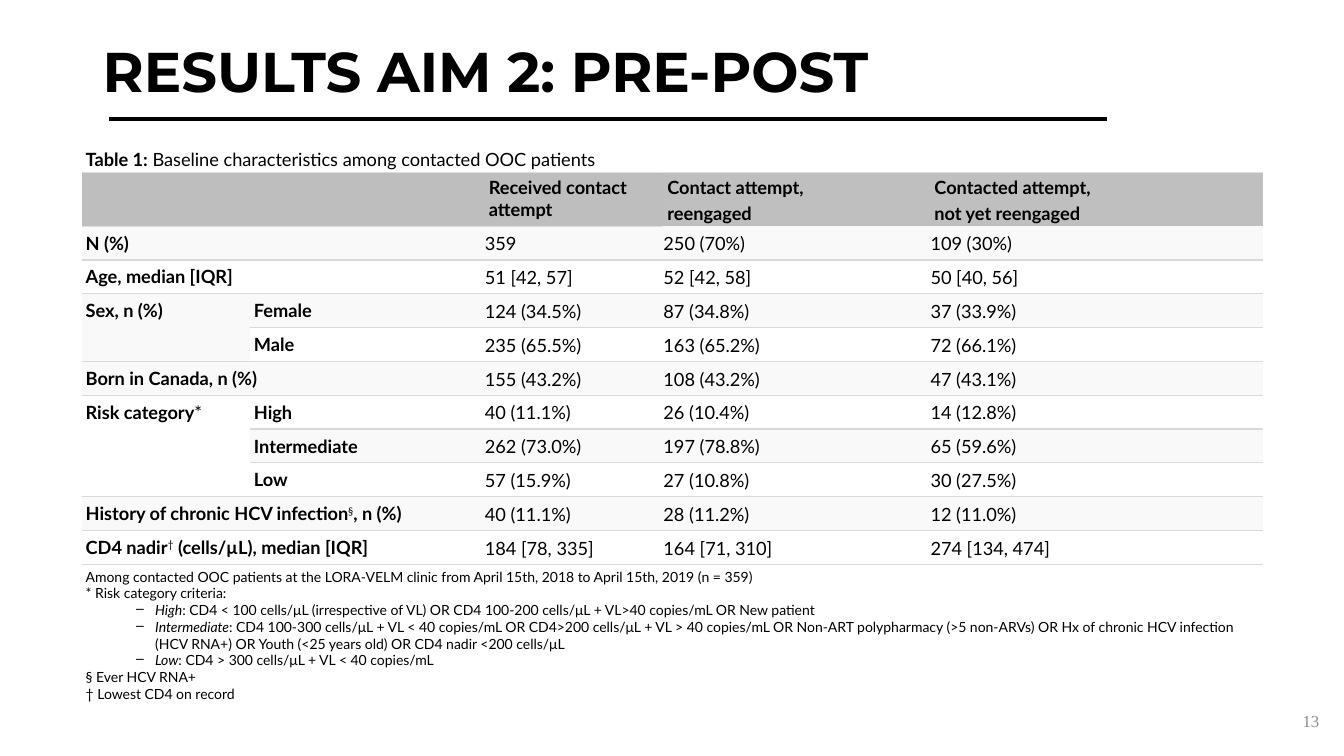
from lxml.etree import SubElement
from pptx import Presentation
from pptx.dml.color import RGBColor
from pptx.enum.shapes import MSO_CONNECTOR
from pptx.enum.text import MSO_ANCHOR, PP_ALIGN
from pptx.oxml.ns import qn
from pptx.util import Cm, Pt

COLORS = {"ink": "000000", "paper": "FFFFFF", "stripe": "F9F9F9", "header": "BEBEBE",
          "header_light": "BFBFBF", "rule": "D9D9D9", "header_rule": "DDDDDD", "number": "8C8C8C"}
NO_GRID_STYLE = "{2D5ABB26-0587-4C30-8999-92F81FD0307C}"
COLUMN_WIDTHS = [4.24, 5.92, 4.5, 6.73, 8.38]
CAPTION_HEIGHT, HEADER_HEIGHT, ROW_HEIGHT, NOTES_HEIGHT = 0.71, 1.36, 0.85, 3.53
NARROW_INSETS = (0.1, 0.1, 0.03, 0.05)
LABEL_INSETS = (0.1, 0.15, 0.03, 0.15)
NO_INSETS = (0, 0, 0, 0)
RULE = ("rule", 1)
HEADER_RULE = ("header_rule", 0.6)

# Spans are (text, style) pairs; style letters: b bold, i italic, s superscript
CAPTION = [("Table 1:", "b"), (" Baseline characteristics among contacted OOC patients", "")]
HEADERS = [["Received contact attempt"], ["Contact attempt,", "reengaged"],
           ["Contacted attempt,", "not yet reengaged"]]
# Label spans, sublabel, values
ROWS = [
    ([("N (%)", "b")], "", ["359", "250 (70%)", "109 (30%)"]),
    ([("Age, median [IQR]", "b")], "", ["51 [42, 57]", "52 [42, 58]", "50 [40, 56]"]),
    ([("Sex, n (%)", "b")], "Female", ["124 (34.5%)", "87 (34.8%)", "37 (33.9%)"]),
    ([], "Male", ["235 (65.5%)", "163 (65.2%)", "72 (66.1%)"]),
    ([("Born in Canada, n (%)", "b")], "", ["155 (43.2%)", "108 (43.2%)", "47 (43.1%)"]),
    ([("Risk category", "b"), ("*", "")], "High", ["40 (11.1%)", "26 (10.4%)", "14 (12.8%)"]),
    ([], "Intermediate", ["262 (73.0%)", "197 (78.8%)", "65 (59.6%)"]),
    ([], "Low", ["57 (15.9%)", "27 (10.8%)", "30 (27.5%)"]),
    ([("History of chronic HCV infection", "b"), ("§", "s"), (", n (%)", "b")], "",
     ["40 (11.1%)", "28 (11.2%)", "12 (11.0%)"]),
    ([("CD4 nadir", "b"), ("†", "s"), (" (cells/µL), median [IQR]", "b")], "",
     ["184 [78, 335]", "164 [71, 310]", "274 [134, 474]"]),
]
NOTES = [
    [("Among contacted OOC patients at the LORA-VELM clinic from April 15th, 2018 "
      "to April 15th, 2019 (n = 359)", ""), ("\n", ""), ("* Risk category criteria:", "")],
    [("High", "i"), (": CD4 < 100 cells/μL (irrespective of VL) OR CD4 100-200 cells/μL + "
                     "VL>40 copies/mL OR New patient", "")],
    [("Intermediate", "i"), (": CD4 100-300 cells/μL + VL < 40 copies/mL OR CD4>200 cells/μL + "
                             "VL > 40 copies/mL OR Non-ART polypharmacy (>5 non-ARVs) OR Hx of "
                             "chronic HCV infection (HCV RNA+) OR Youth (<25 years old) OR "
                             "CD4 nadir <200 cells/μL", "")],
    [("Low", "i"), (": CD4 > 300 cells/μL + VL < 40 copies/mL", "")],
    [("§ Ever HCV RNA+", "")],
    [("† Lowest CD4 on record", "")],
]


def color(name):
    return RGBColor.from_string(COLORS[name])


def set_font(para, size, name="Lato", ink="ink"):
    para.font.size = Pt(size)
    para.font.name = name
    para.font.color.rgb = color(ink)


def write_spans(para, spans, size=13):
    set_font(para, size)
    for text, style in spans:
        if text == "\n":
            para.add_line_break()
            continue
        span = para.add_run()
        span.text = text
        span.font.bold = "b" in style
        span.font.italic = "i" in style
        if "s" in style:
            span.font._element.set("baseline", "30000")


def write_cell(cell, lines, insets, anchor=MSO_ANCHOR.TOP, size=13, before=3):
    cell.margin_left, cell.margin_top, cell.margin_right, cell.margin_bottom = map(Cm, insets)
    cell.vertical_anchor = anchor
    frame = cell.text_frame
    for index, spans in enumerate(lines):
        para = frame.add_paragraph() if index else frame.paragraphs[0]
        para.space_before = Pt(before)
        write_spans(para, spans, size)


def write_value(cell, text):
    write_cell(cell, [[(text, "")]], NO_INSETS, MSO_ANCHOR.MIDDLE, before=2)
    para = cell.text_frame.paragraphs[0]
    para.line_spacing = 1.07
    para.space_after = Pt(2)


def style_cell(cell, fill, top=None, bottom=None):
    properties = cell._tc.get_or_add_tcPr()
    for tag, rule in (("a:lnT", top), ("a:lnB", bottom)):
        if rule:
            line = SubElement(properties, qn(tag), w=str(Pt(rule[1])))
            SubElement(SubElement(line, qn("a:solidFill")), qn("a:srgbClr"), val=COLORS[rule[0]])
    cell.fill.solid()
    cell.fill.fore_color.rgb = color(fill)


def add_dash(para):
    properties = para._p.get_or_add_pPr()
    properties.set("marL", str(Cm(1.75)))
    properties.set("indent", str(Cm(-0.48)))
    properties.set("lvl", "1")
    dash = SubElement(properties, qn("a:buChar"), char="–")
    properties.find(qn("a:defRPr")).addprevious(dash)


def add_text(page, text, left, top, width, height, size, font, ink="ink"):
    box = page.shapes.add_textbox(Cm(left), Cm(top), Cm(width), Cm(height))
    box.text_frame.word_wrap = True
    box.text_frame.vertical_anchor = MSO_ANCHOR.MIDDLE
    para = box.text_frame.paragraphs[0]
    para.text = text
    set_font(para, size, font, ink)
    return para


def add_rule(page, left, top, right):
    rule = page.shapes.add_connector(MSO_CONNECTOR.STRAIGHT, Cm(left), Cm(top), Cm(right), Cm(top))
    rule.line.color.rgb = color("ink")
    rule.line.width = Pt(2.25)
    SubElement(rule._element.spPr, qn("a:effectLst"))


def add_characteristics_table(page):
    heights = [CAPTION_HEIGHT, HEADER_HEIGHT] + [ROW_HEIGHT] * len(ROWS) + [NOTES_HEIGHT]
    frame = page.shapes.add_table(len(heights), len(COLUMN_WIDTHS), Cm(2.06), Cm(3.63),
                                  Cm(sum(COLUMN_WIDTHS)), Cm(sum(heights)))
    table = frame.table
    table.first_row = table.horz_banding = False
    table._tbl.tblPr.find(qn("a:tableStyleId")).text = NO_GRID_STYLE
    for column, width in zip(table.columns, COLUMN_WIDTHS):
        column.width = Cm(width)
    for row, height in zip(table.rows, heights):
        row.height = Cm(height)

    # Caption and header
    caption = table.cell(0, 0)
    caption.merge(table.cell(0, 4))
    write_cell(caption, [CAPTION], NARROW_INSETS, MSO_ANCHOR.BOTTOM)
    style_cell(caption, "paper", bottom=HEADER_RULE)
    corner = table.cell(1, 0)
    corner.merge(table.cell(1, 1))
    style_cell(corner, "header", HEADER_RULE, HEADER_RULE)
    for column, lines in enumerate(HEADERS, 2):
        cell = table.cell(1, column)
        write_cell(cell, [[(line, "b")] for line in lines], NARROW_INSETS)
        if column == 2:
            style_cell(cell, "header", HEADER_RULE, HEADER_RULE)
        else:
            style_cell(cell, "header_light")

    # Patient characteristics
    for row, (label, sublabel, values) in enumerate(ROWS, 2):
        fill = "paper" if row % 2 else "stripe"
        top = HEADER_RULE if row == 2 else RULE
        if label:
            cell = table.cell(row, 0)
            write_cell(cell, [label], LABEL_INSETS)
            style_cell(cell, "paper" if label[0][0] == "Risk category" else fill, top, RULE)
        if sublabel:
            cell = table.cell(row, 1)
            write_cell(cell, [[(sublabel, "b")]], LABEL_INSETS)
            style_cell(cell, fill, top, RULE)
        else:
            table.cell(row, 0).merge(table.cell(row, 1))
        for column, value in enumerate(values, 2):
            cell = table.cell(row, column)
            write_value(cell, value)
            style_cell(cell, fill, None if row == 2 and column > 2 else top, RULE)
    for first, last in ((4, 5), (7, 9)):
        table.cell(first, 0).merge(table.cell(last, 0))

    # Footnotes
    notes = table.cell(len(heights) - 1, 0)
    notes.merge(table.cell(len(heights) - 1, 4))
    write_cell(notes, NOTES, NARROW_INSETS, size=10, before=0)
    style_cell(notes, "paper", top=RULE)
    for para in notes.text_frame.paragraphs[1:4]:
        add_dash(para)


def main():
    deck = Presentation()
    deck.slide_width, deck.slide_height = Cm(33.87), Cm(19.05)
    page = deck.slides.add_slide(deck.slide_layouts[6])
    add_rule(page, 2.74, 3, 27.89)
    title = add_text(page, "RESULTS AIM 2: PRE-POST", 2.34, 0.03, 29.21, 3.68, 40, "Montserrat")
    title.font.bold = True
    title.line_spacing = 0.9
    add_characteristics_table(page)
    number = add_text(page, "13", 25.88, 17.65, 7.62, 1.02, 12, "Times New Roman", "number")
    number.alignment = PP_ALIGN.RIGHT
    deck.save("out.pptx")


if __name__ == "__main__":
    main()
